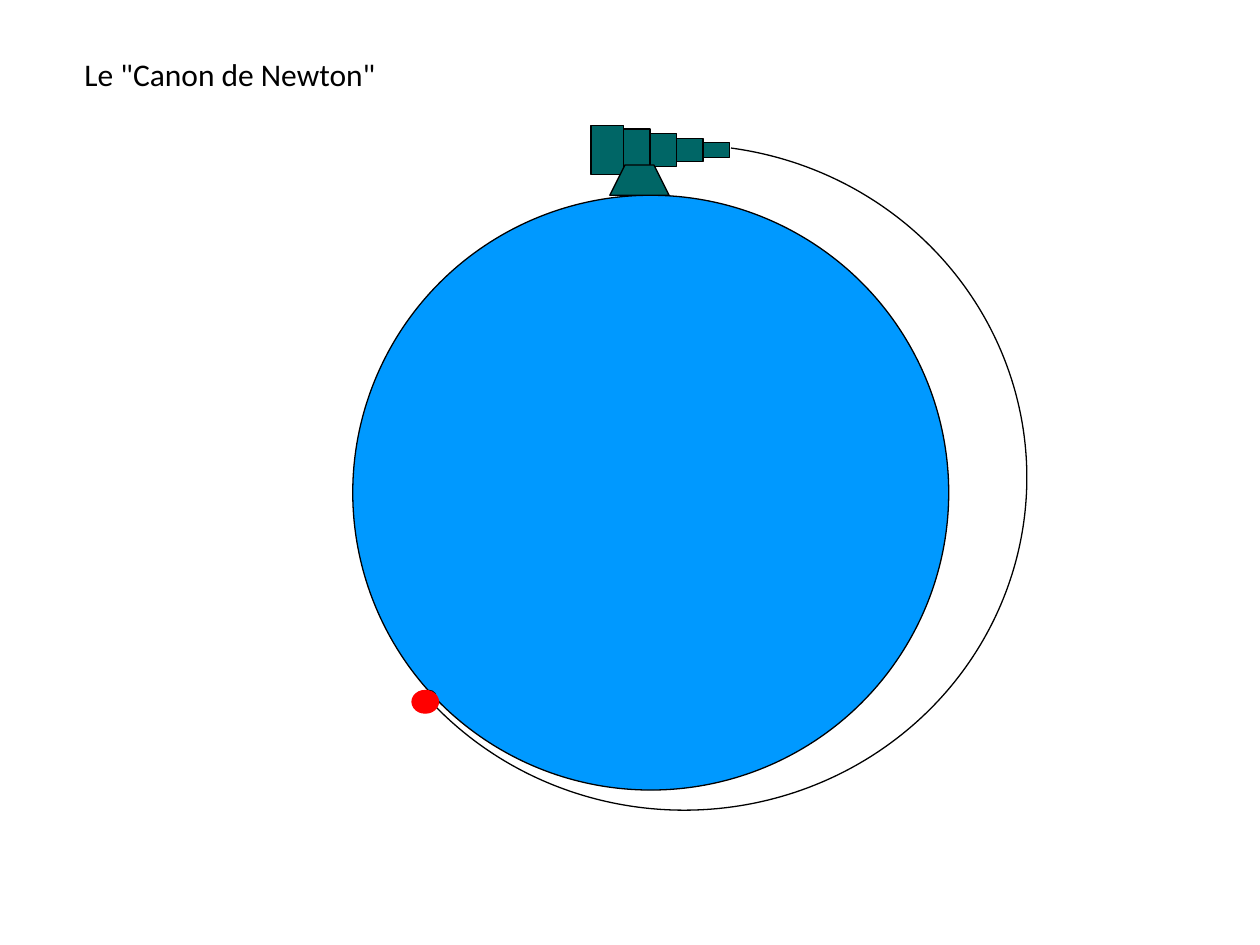
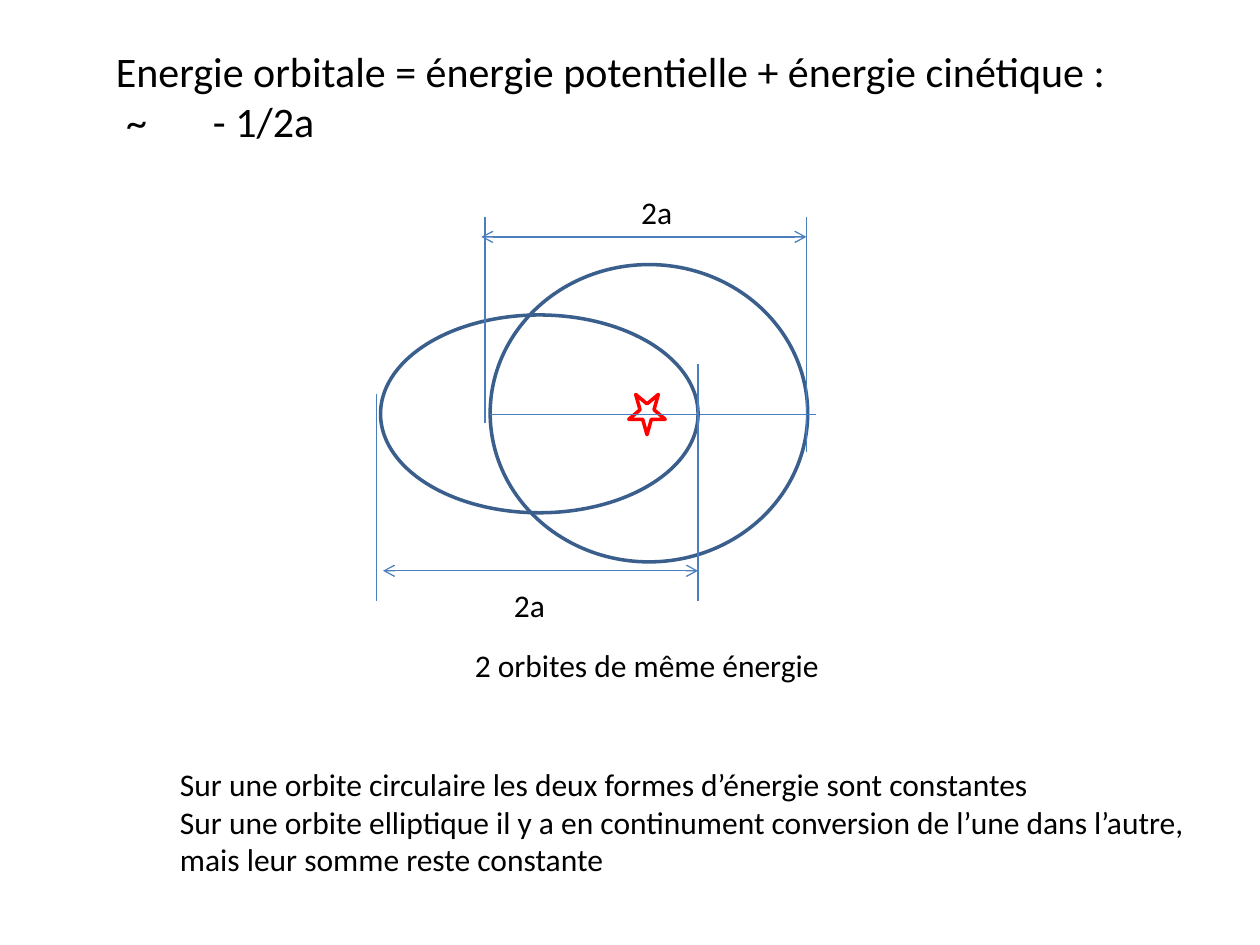
from dataclasses import dataclass

from pptx import Presentation
from pptx.dml.color import RGBColor
from pptx.enum import shapes, text
from pptx.oxml import xmlchemy
from pptx.oxml.ns import qn
from pptx.util import Inches, Pt
from lxml import etree

FONT = "Calibri"
BLACK = RGBColor(0, 0, 0)
WHITE = RGBColor(0xFF, 0xFF, 0xFF)
RED = RGBColor(0xFF, 0, 0)
EARTH = RGBColor(0x00, 0x99, 0xFF)
GUN = RGBColor(0x00, 0x66, 0x66)
SPOT = RGBColor(0x4F, 0x81, 0xBD)
ORBIT = RGBColor(0x3A, 0x5F, 0x8C)
RULE = RGBColor(0x4B, 0x7E, 0xBC)
KIND = shapes.MSO_SHAPE
THIN, THICK = 0.75, 2


@dataclass
class Box:
    left: float
    top: float
    width: float
    height: float

    def sizes(self) -> tuple:
        return tuple(map(Inches, (self.left, self.top, self.width, self.height)))


@dataclass
class Span:
    """A dimension arrow between two upright guide lines."""
    left: float
    right: float
    y: float
    tip: float
    guides: tuple
    label: Box


SPANS = [
    Span(2.99, 5.54, 4.53, 3.04, ((3.13, 4.77), (2.89, 4.77)), Box(3.98, 4.6, 0.47, 0.4)),
    Span(3.85, 6.4, 1.88, 3.82, ((1.72, 3.36), (1.72, 3.59)), Box(4.99, 1.48, 0.47, 0.4)),
]


def draw(slide, kind, box: Box, fill=None, line=BLACK, width: float = THIN):
    shape = slide.shapes.add_shape(kind, *box.sizes())
    shape.shadow.inherit = False
    if fill is None:
        shape.fill.background()
    else:
        shape.fill.solid()
        shape.fill.fore_color.rgb = fill
    shape.line.color.rgb = line
    shape.line.width = Pt(width)
    return shape


def rule(slide, x1: float, y1: float, x2: float, y2: float, arrows: bool = False) -> None:
    line = slide.shapes.add_connector(
        shapes.MSO_CONNECTOR.STRAIGHT, *map(Inches, (x1, y1, x2, y2)))
    line.line.color.rgb = RULE
    line.line.width = Pt(THIN)
    props = line._element.spPr
    if arrows:
        for end in ("a:headEnd", "a:tailEnd"):
            etree.SubElement(props.find(qn("a:ln")), qn(end), type="arrow")
    etree.SubElement(props, qn("a:effectLst"))


def style(shape, words: str, size: float) -> None:
    frame = shape.text_frame
    frame.text = words
    frame.word_wrap = True
    frame.auto_size = text.MSO_AUTO_SIZE.NONE
    frame.vertical_anchor = text.MSO_ANCHOR.TOP
    for par in frame.paragraphs:
        par.alignment = text.PP_ALIGN.LEFT
        for run in par.runs:
            run.font.name = FONT
            run.font.size = Pt(size)
            run.font.color.rgb = BLACK


def note(slide, words: str, box: Box) -> None:
    style(slide.shapes.add_textbox(*box.sizes()), words, 18)


def start(deck, words: str, box: Box, size: float):
    """Add a title-only slide and set its title."""
    slide = deck.slides.add_slide(deck.slide_layouts[5])
    title = slide.shapes.title
    title.left, title.top, title.width, title.height = box.sizes()
    style(title, words, size)
    return slide


def set_tabs(par, *stops: float) -> None:
    tabs = etree.SubElement(par._p.get_or_add_pPr(), qn("a:tabLst"))
    for stop in stops:
        etree.SubElement(tabs, qn("a:tab"), pos=str(Inches(stop)), algn="l")


def cannon(deck) -> None:
    slide = start(deck, 'Le "Canon de Newton"', Box(0.57, 0.39, 2.73, 0.4), 18)
    draw(slide, KIND.OVAL, Box(2.8, 1.55, 4.73, 4.72), EARTH)

    left, axis = 4.69, 1.19
    for width, height in ((0.26, 0.39), (0.21, 0.33), (0.21, 0.26), (0.21, 0.18), (0.21, 0.12)):
        draw(slide, KIND.RECTANGLE, Box(left, axis - height / 2, width, height), GUN)
        left += width
    base = draw(slide, KIND.TRAPEZOID, Box(4.84, 1.31, 0.47, 0.24), GUN)
    base.adjustments[0] = 0.5

    path = draw(slide, KIND.ARC, Box(2.71, 1.15, 5.44, 5.28))
    for i, angle in enumerate((278.1, 138.3)):
        path.adjustments[i] = angle * 0.6  # 60000 units a degree, scaled by 100000

    draw(slide, KIND.OVAL, Box(3.35, 5.48, 0.11, 0.1), SPOT)
    draw(slide, KIND.OVAL, Box(3.27, 5.48, 0.21, 0.18), RED, RED)


def energy(deck) -> None:
    slide = start(
        deck,
        "Energie orbitale = énergie potentielle + énergie cinétique :\n\t~\t- 1/2a",
        Box(0.82, 0.31, 8.22, 0.91), 24)
    set_tabs(slide.shapes.title.text_frame.paragraphs[1], 0.08, 0.77)

    star = draw(slide, KIND.STAR_5_POINT, Box(4.99, 3.13, 0.29, 0.32), WHITE, RED, THICK)
    star.rotation = 180
    draw(slide, KIND.OVAL, Box(3.89, 2.1, 2.52, 2.36), None, ORBIT, THICK)
    rule(slide, 3.89, 3.29, 6.48, 3.29)
    draw(slide, KIND.OVAL, Box(3.02, 2.5, 2.52, 1.57), None, ORBIT, THICK)

    for span in SPANS:
        for x, (top, foot) in zip((span.left, span.right), span.guides):
            rule(slide, x, top, x, foot)
        rule(slide, span.tip, span.y, span.right, span.y, arrows=True)
        note(slide, "2a", span.label)

    note(slide, "2 orbites de même énergie", Box(3.67, 5.08, 2.97, 0.4))
    note(slide,
         "Sur une orbite circulaire les deux formes d’énergie sont constantes\n"
         "Sur une orbite elliptique il y a en continument conversion de l’une dans l’autre,\n"
         "mais leur somme reste constante",
         Box(1.33, 6.02, 8.38, 1.01))


def main() -> None:
    deck = Presentation()
    deck.slide_width, deck.slide_height = Inches(10), Inches(7.5)
    cannon(deck)
    energy(deck)
    deck.save("out.pptx")


if __name__ == "__main__":
    main()
